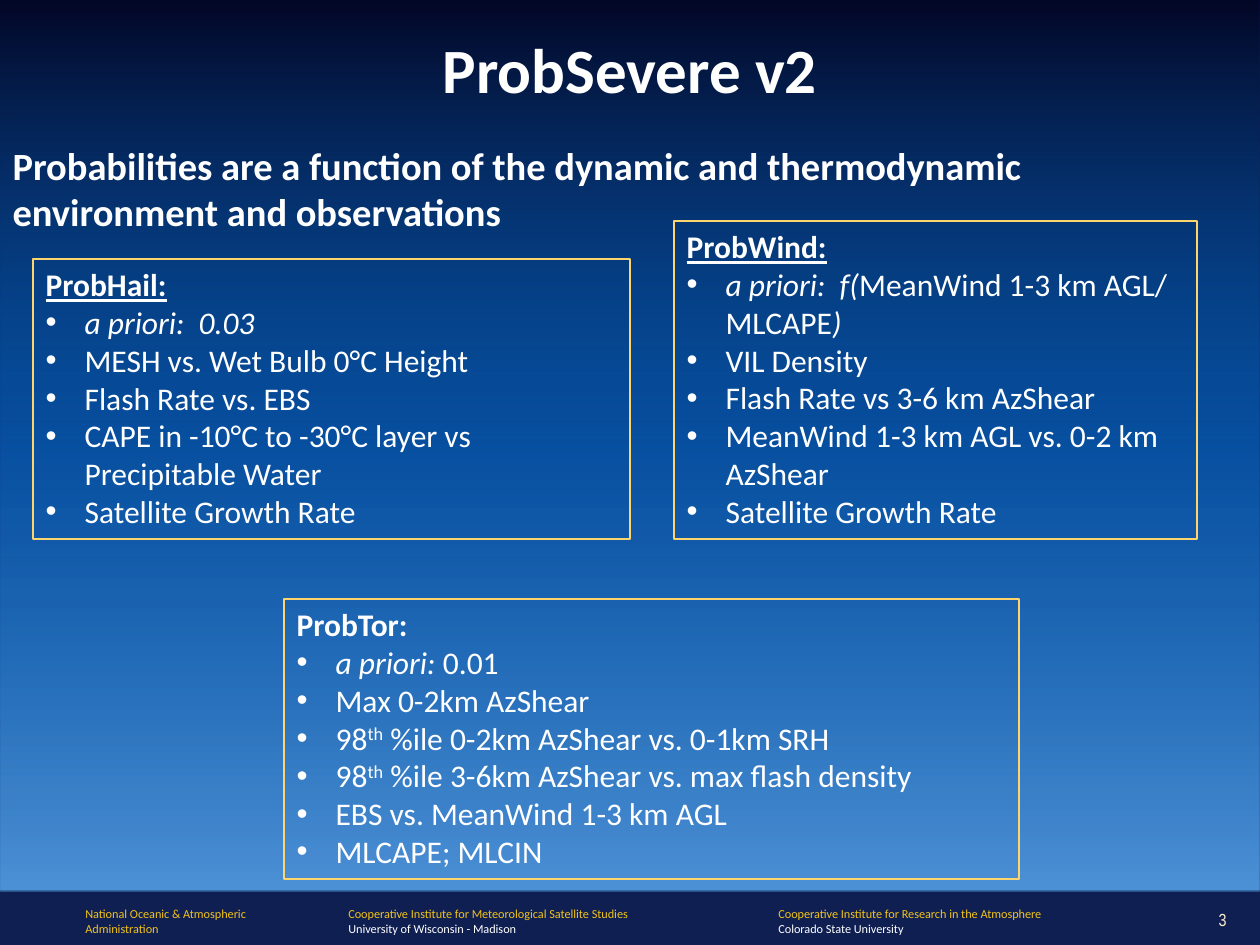
from dataclasses import dataclass

from lxml import etree
from pptx import Presentation
from pptx import util as u
from pptx.dml.color import RGBColor
from pptx.enum import shapes, text
from pptx.oxml import parse_xml
from pptx.oxml.ns import nsdecls, qn


@dataclass(frozen=True)
class Theme:
    """Colours, fonts and type sizes of the deck."""
    base: str = "0F1F52"
    white: str = "FFFFFF"
    gold: str = "F2C31A"
    border: str = "FED46C"
    cream: str = "FFF1CE"
    sky: tuple = ((0, "01021E", 85), (50, "007EEB", 50), (100, "61B6FF", 75))
    font: str = "Calibri"
    number_font: str = "Arial Narrow"
    title: int = 36
    lead: int = 22
    body: int = 18
    number: int = 10
    credit: int = 7


THEME = Theme()
PX_PER_INCH = 126
BULLET_INDENT = 39

LEAD = ("Probabilities are a function of the dynamic and thermodynamic "
        "environment and observations")

PREDICTORS = [
    (2, (33, 259, 597, 280), ("ProbHail:", "bu"), [
        [("a priori:  0.03", "i")],
        [("MESH vs. Wet Bulb 0°C Height", "")],
        [("Flash Rate vs. EBS", "")],
        [("CAPE in -10°C to -30°C layer vs Precipitable Water", "")],
        [("Satellite Growth Rate", "")],
    ]),
    (3, (674, 221, 523, 318), ("ProbWind:", "bu"), [
        [("a priori:  f(", "i"), ("MeanWind 1-3 km AGL/ MLCAPE", ""), (")", "i")],
        [("VIL Density", "")],
        [("Flash Rate vs 3-6 km AzShear", "")],
        [("MeanWind 1-3 km AGL vs. 0-2 km AzShear", "")],
        [("Satellite Growth Rate", "")],
    ]),
    (4, (284, 599, 735, 280), ("ProbTor:", "b"), [
        [("a priori: ", "i"), ("0.01", "")],
        [("Max 0-2km AzShear", "")],
        [("98", ""), ("th", "s"), (" %ile 0-2km AzShear vs. 0-1km SRH", "")],
        [("98", ""), ("th", "s"), (" %ile 3-6km AzShear vs. max flash density", "")],
        [("EBS vs. MeanWind 1-3 km AGL", "")],
        [("MLCAPE; MLCIN", "")],
    ]),
]

CREDITS = [
    ((73, 900, 199, 43), [("National Oceanic & Atmospheric", THEME.gold),
                          ("Administration", THEME.gold)]),
    ((336, 900, 368, 43),
     [("Cooperative Institute for Meteorological Satellite Studies", THEME.gold),
      ("University of Wisconsin - Madison", THEME.white)]),
    ((766, 900, 368, 43),
     [("Cooperative Institute for Research in the Atmosphere", THEME.gold),
      ("Colorado State University", THEME.white)]),
]


def px(length):
    """Turn a length in px into EMU."""
    return u.Inches(length / PX_PER_INCH)


def place(shape, box, anchor=text.MSO_ANCHOR.TOP):
    """Move a text shape to its box and return its text frame."""
    shape.left, shape.top, shape.width, shape.height = map(px, box)
    frame = shape.text_frame
    frame.word_wrap = True
    frame.auto_size = text.MSO_AUTO_SIZE.NONE
    frame.vertical_anchor = anchor
    return frame


def add_run(paragraph, wording, size, color=THEME.white, style="", name=THEME.font):
    """Add one run; style letters are b, i, u and s for superscript."""
    run = paragraph.add_run()
    run.text = wording
    run.font.name = name
    run.font.size = u.Pt(size)
    run.font.color.rgb = RGBColor.from_string(color)
    run.font.bold = "b" in style
    run.font.italic = "i" in style
    run.font.underline = "u" in style
    if "s" in style:
        run._r.get_or_add_rPr().set("baseline", "30000")


def set_bullet(paragraph, bulleted):
    """Give a paragraph a hanging bullet, or no bullet and no indent."""
    indent = px(BULLET_INDENT) if bulleted else 0
    properties = paragraph._p.get_or_add_pPr()
    properties.set("marL", str(indent))
    properties.set("indent", str(-indent))
    paragraph.space_before = u.Pt(0)
    if bulleted:
        etree.SubElement(properties, qn("a:buFont"), typeface="Arial")
        etree.SubElement(properties, qn("a:buChar"), char="•")
    else:
        etree.SubElement(properties, qn("a:buNone"))


def add_sky(slide, box):
    """Lay the vertical gradient panel behind everything else."""
    panel = slide.shapes.add_shape(shapes.MSO_SHAPE.RECTANGLE, *map(px, box))
    panel.shadow.inherit = False
    panel.line.fill.background()
    stops = "".join(
        f'<a:gs pos="{position * 1000}"><a:srgbClr val="{color}">'
        f'<a:alpha val="{alpha * 1000}"/></a:srgbClr></a:gs>'
        for position, color, alpha in THEME.sky)
    gradient = parse_xml(
        f'<a:gradFill {nsdecls("a")} rotWithShape="1"><a:gsLst>{stops}</a:gsLst>'
        '<a:lin ang="5400000" scaled="0"/></a:gradFill>')
    panel._element.spPr.find(qn("a:prstGeom")).addnext(gradient)
    slide.shapes.title._element.addprevious(panel._element)


def fill_title(slide, box):
    """Write the slide title."""
    frame = place(slide.shapes.title, box, text.MSO_ANCHOR.MIDDLE)
    paragraph = frame.paragraphs[0]
    paragraph.alignment = text.PP_ALIGN.CENTER
    add_run(paragraph, "ProbSevere v2", THEME.title, style="b")


def fill_lead(slide, box):
    """Write the lead statement under the title."""
    paragraph = place(slide.placeholders[1], box).paragraphs[0]
    set_bullet(paragraph, False)
    add_run(paragraph, LEAD, THEME.lead, style="b")


def fill_predictors(placeholder, box, heading, items):
    """Write one outlined list of predictors with its heading."""
    frame = place(placeholder, box)
    placeholder.line.color.rgb = RGBColor.from_string(THEME.border)
    placeholder.line.width = u.Pt(0.75)
    paragraph = frame.paragraphs[0]
    set_bullet(paragraph, False)
    add_run(paragraph, heading[0], THEME.body, style=heading[1])
    for item in items:
        paragraph = frame.add_paragraph()
        set_bullet(paragraph, True)
        for wording, style in item:
            add_run(paragraph, wording, THEME.body, style=style)


def add_credit(slide, box, lines):
    """Add one two-line institute credit to the footer."""
    frame = place(slide.shapes.add_textbox(*map(px, box)), box)
    for index, (wording, color) in enumerate(lines):
        paragraph = frame.add_paragraph() if index else frame.paragraphs[0]
        add_run(paragraph, wording, THEME.credit, color)


def add_slide_number(slide, box):
    """Add the slide number to the footer."""
    frame = place(slide.shapes.add_textbox(*map(px, box)), box, text.MSO_ANCHOR.MIDDLE)
    paragraph = frame.paragraphs[0]
    paragraph.alignment = text.PP_ALIGN.RIGHT
    add_run(paragraph, "3", THEME.number, THEME.cream, name=THEME.number_font)


def main():
    """Build the slide and save it."""
    presentation = Presentation()
    presentation.slide_width, presentation.slide_height = px(1260), px(945)
    slide = presentation.slides.add_slide(
        presentation.slide_layouts.get_by_name("Comparison"))
    slide.background.fill.solid()
    slide.background.fill.fore_color.rgb = RGBColor.from_string(THEME.base)
    add_sky(slide, (0, 0, 1260, 891))
    fill_title(slide, (63, 0, 1134, 136))
    fill_lead(slide, (0, 136, 1239, 106))
    for index, box, heading, items in PREDICTORS:
        fill_predictors(slide.placeholders[index], box, heading, items)
    for box, lines in CREDITS:
        add_credit(slide, box, lines)
    add_slide_number(slide, (1176, 903, 63, 32))
    presentation.save("out.pptx")


if __name__ == "__main__":
    main()
